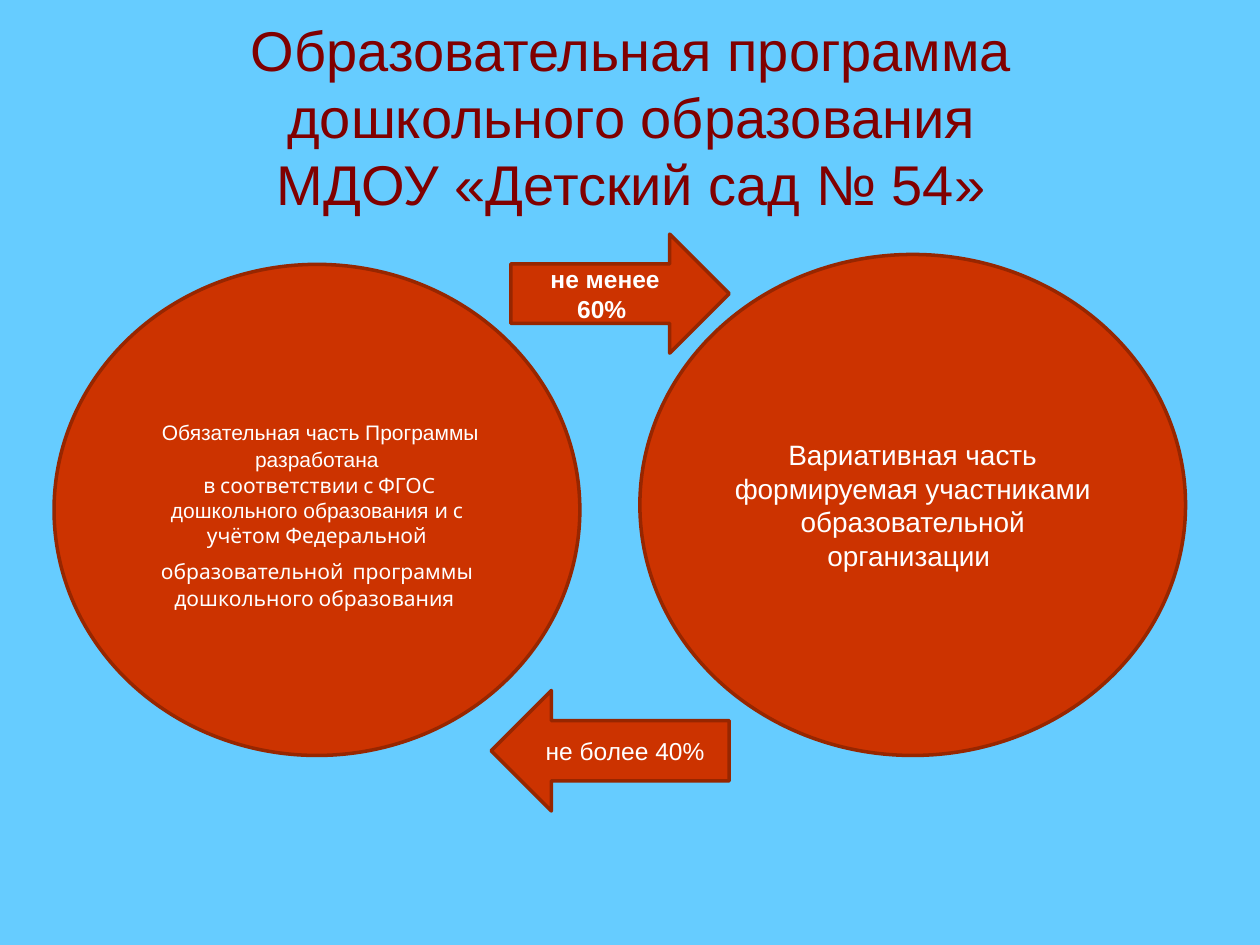
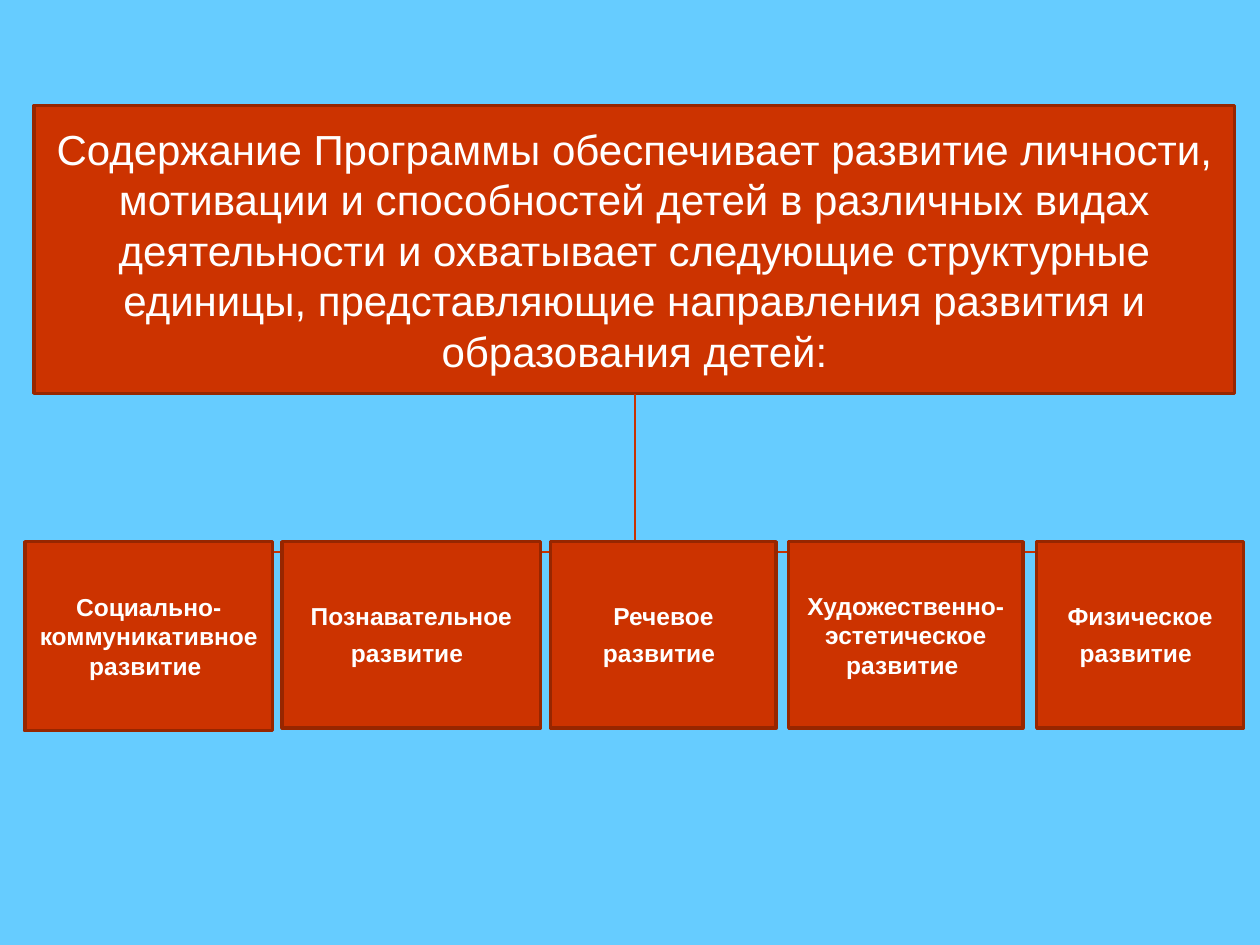
import pptx
import pptx.util
import pptx.dml.color
import pptx.enum.shapes
import pptx.enum.text
import lxml.etree
from dataclasses import dataclass

Cm = pptx.util.Cm
Pt = pptx.util.Pt
SHAPE = pptx.enum.shapes.MSO_SHAPE


@dataclass(frozen=True)
class Theme:
    sky: str = "66CCFF"
    brick: str = "CC3300"
    edge: str = "972600"
    link: str = "C83200"
    title: str = "800000"
    white: str = "FFFFFF"
    main: str = "Arial"
    accent: str = "Cabin"
    title_size: int = 32
    lead_size: int = 24
    spacer_size: int = 18
    oval_size: int = 16
    label_size: int = 14
    detail_size: int = 12


theme = Theme()
rgb = pptx.dml.color.RGBColor.from_string


def write(frame, paragraphs, color):
    """Fill a frame with centred paragraphs of (text, size, font, bold) runs."""
    frame.word_wrap = True
    frame.vertical_anchor = pptx.enum.text.MSO_ANCHOR.MIDDLE
    for number, pieces in enumerate(paragraphs):
        paragraph = frame.add_paragraph() if number else frame.paragraphs[0]
        paragraph.alignment = pptx.enum.text.PP_ALIGN.CENTER
        for text, size, font, bold in pieces:
            first = len(paragraph.runs)
            if "\v" in text:
                paragraph.text = text
            else:
                paragraph.add_run().text = text
            for run in paragraph.runs[first:]:
                run.font.size = Pt(size)
                run.font.name = font
                run.font.bold = bold
                run.font.color.rgb = rgb(color)


def add_block(slide, preset, left, top, width, height, paragraphs):
    """Add a brick-coloured shape with white text; lengths in centimetres."""
    block = slide.shapes.add_shape(preset, Cm(left), Cm(top), Cm(width), Cm(height))
    block.shadow.inherit = False
    block.fill.solid()
    block.fill.fore_color.rgb = rgb(theme.brick)
    block.line.color.rgb = rgb(theme.edge)
    block.line.width = Pt(2)
    write(block.text_frame, paragraphs, theme.white)


# Presentation and shared background
deck = pptx.Presentation()
deck.slide_width, deck.slide_height = Cm(25.4), Cm(19.05)
backdrop = deck.slide_master.background.fill
backdrop.solid()
backdrop.fore_color.rgb = rgb(theme.sky)
blank = deck.slide_layouts[6]

# Slide 1: two parts of the programme
parts = deck.slides.add_slide(blank)
detail, label = theme.detail_size, theme.label_size
required_part = [
    [(" ", theme.spacer_size, theme.accent, False),
     ("Обязательная часть Программы разработана", detail, theme.main, False)],
    [(" в соответствии с ФГОС ", detail, theme.accent, False),
     ("дошкольного образования ", detail, theme.main, False),
     ("и с учётом Федеральной образовательной", detail, theme.accent, False),
     (" ", theme.spacer_size, theme.main, False),
     ("программы дошкольного образования ", detail, theme.accent, False)],
]
variable_part = [[("Вариативная часть формируемая участниками образовательной организации ",
                   theme.oval_size, theme.main, False)]]
at_least = [[("не менее 60% ", label, theme.main, True)]]
at_most = [[("не более 40%", label, theme.main, False)]]

add_block(parts, SHAPE.OVAL, 1.09, 5.33, 10.6, 9.9, required_part)
add_block(parts, SHAPE.OVAL, 12.9, 5.13, 11, 10.1, variable_part)
add_block(parts, SHAPE.RIGHT_ARROW, 10.3, 4.72, 4.4, 2.4, at_least)
add_block(parts, SHAPE.LEFT_ARROW, 9.9, 13.92, 4.8, 2.43, at_most)

programme_title = parts.shapes.add_textbox(Cm(1.3), Cm(0.75), Cm(22.86), Cm(3.18))
write(programme_title.text_frame,
      [[("Образовательная программа дошкольного образования\vМДОУ «Детский сад № 54»",
         theme.title_size, theme.main, False)]], theme.title)

# Slide 2: content of the programme
content = deck.slides.add_slide(blank)
add_block(content, SHAPE.RECTANGLE, 0.69, 2.13, 24.2, 5.8, [[(
    "Содержание Программы обеспечивает развитие личности, мотивации и способностей "
    "детей в различных видах деятельности и охватывает следующие структурные единицы, "
    "представляющие направления развития и образования детей:",
    theme.lead_size, theme.main, False)]])

# Tree lines: trunk, then the bar behind the areas
for x1, y1, x2, y2 in [(12.8, 7.95, 12.8, 11.13), (2.29, 11.13, 23.29, 11.13)]:
    branch = content.shapes.add_connector(
        pptx.enum.shapes.MSO_CONNECTOR.STRAIGHT, Cm(x1), Cm(y1), Cm(x2), Cm(y2))
    branch.line.color.rgb = rgb(theme.link)
    branch.line.width = Pt(0.75)
    lxml.etree.SubElement(branch.element.spPr, pptx.oxml.ns.qn("a:effectLst"))

# Areas of development: text, left, width, height, size of the closing space
areas = [
    ("Социально-коммуникативное развитие", 0.5, 5, 3.81, label),
    ("Познавательное развитие", 5.69, 5.21, 3.76, theme.spacer_size),
    ("Речевое развитие", 11.1, 4.55, 3.76, theme.spacer_size),
    ("Художественно-эстетическое развитие", 15.9, 4.72, 3.76, label),
    ("Физическое развитие", 20.9, 4.17, 3.76, theme.spacer_size),
]
for area, left, width, height, space_size in areas:
    add_block(content, SHAPE.RECTANGLE, left, 10.92, width, height,
              [[(area, label, theme.main, True), (" ", space_size, theme.main, False)]])

deck.save("out.pptx")
